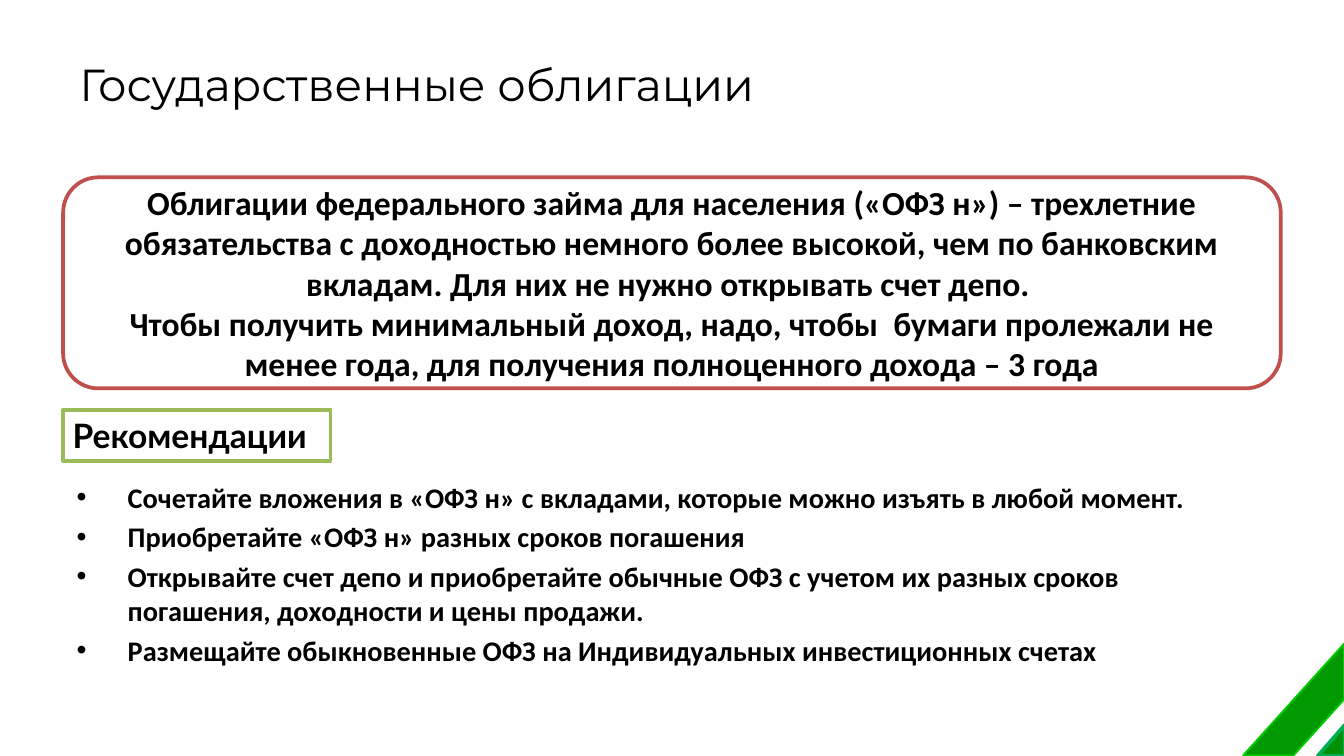
from dataclasses import dataclass

import pptx
import pptx.dml.color
import pptx.enum.shapes
import pptx.enum.text
import pptx.util

Inches = pptx.util.Inches
Pt = pptx.util.Pt
MSO_SHAPE = pptx.enum.shapes.MSO_SHAPE
PP_ALIGN = pptx.enum.text.PP_ALIGN
MSO_ANCHOR = pptx.enum.text.MSO_ANCHOR
MSO_AUTO_SIZE = pptx.enum.text.MSO_AUTO_SIZE

COLORS = {
    "text": "000000",
    "paper": "FFFFFF",
    "red": "C0504D",
    "olive": "9BBB59",
    "stripe": "009900",
    "stripe_edge": "00CC00",
    "corner": "038F06",
    "corner_edge": "00B050",
}

TITLE = "Государственные облигации"
DEFINITION = (
    "Облигации федерального займа для населения («ОФЗ н») – трехлетние "
    "обязательства с доходностью немного более высокой, чем по банковским "
    "вкладам. Для них не нужно открывать счет депо. ",
    "Чтобы получить минимальный доход, надо, чтобы  бумаги пролежали не "
    "менее года, для получения полноценного дохода – 3 года",
)
ADVICE = (
    "Сочетайте вложения в «ОФЗ н» с вкладами, которые можно изъять в любой момент.",
    "Приобретайте «ОФЗ н» разных сроков погашения",
    "Открывайте счет депо и приобретайте обычные ОФЗ с учетом их разных сроков "
    "погашения, доходности и цены продажи.",
    "Размещайте обыкновенные ОФЗ на Индивидуальных инвестиционных счетах",
)


@dataclass(frozen=True)
class Box:
    left: float
    top: float
    width: float
    height: float


@dataclass(frozen=True)
class Figure:
    kind: MSO_SHAPE
    box: Box
    fill: str
    line: str
    line_pt: float = 2
    rotation: float = 0


@dataclass(frozen=True)
class TextStyle:
    font: str
    size: float
    bold: bool = True
    align: PP_ALIGN = PP_ALIGN.LEFT


DEFINITION_FRAME = Figure(
    MSO_SHAPE.ROUNDED_RECTANGLE, Box(0.47, 1.32, 9.06, 1.57), "paper", "red")
ADVICE_LABEL = Figure(
    MSO_SHAPE.RECTANGLE, Box(0.47, 3.05, 1.99, 0.38), "paper", "olive")
CORNER_DECOR = (
    Figure(MSO_SHAPE.DIAGONAL_STRIPE, Box(9.25, 4.79, 0.75, 0.83),
           "stripe", "stripe_edge", 1, 180),
    Figure(MSO_SHAPE.RIGHT_TRIANGLE, Box(9.79, 5.41, 0.23, 0.2),
           "corner", "corner_edge", 2, 270),
)


def rgb(name: str) -> pptx.dml.color.RGBColor:
    return pptx.dml.color.RGBColor.from_string(COLORS[name])


def place(shape, box: Box) -> None:
    shape.left, shape.top = Inches(box.left), Inches(box.top)
    shape.width, shape.height = Inches(box.width), Inches(box.height)


def write(tf, lines: tuple[str, ...], style: TextStyle) -> None:
    """Fill a text frame with one paragraph per line."""
    for i, line in enumerate(lines):
        p = tf.paragraphs[0] if i == 0 else tf.add_paragraph()
        p.alignment = style.align
        r = p.add_run()
        r.text = line
        r.font.name = style.font
        r.font.size = Pt(style.size)
        r.font.bold = style.bold
        r.font.color.rgb = rgb("text")


def draw(s, figure: Figure):
    b = figure.box
    sp = s.shapes.add_shape(figure.kind, Inches(b.left), Inches(b.top),
                            Inches(b.width), Inches(b.height))
    sp.shadow.inherit = False
    sp.rotation = figure.rotation
    sp.fill.solid()
    sp.fill.fore_color.rgb = rgb(figure.fill)
    sp.line.color.rgb = rgb(figure.line)
    sp.line.width = Pt(figure.line_pt)
    return sp


def draw_text_frame(s, figure: Figure, lines: tuple[str, ...],
                    style: TextStyle, anchor: MSO_ANCHOR) -> None:
    tf = draw(s, figure).text_frame
    tf.margin_left = tf.margin_right = Inches(0.07)
    tf.margin_top = tf.margin_bottom = Inches(0.04)
    tf.vertical_anchor = anchor
    tf.word_wrap = True
    write(tf, lines, style)


def fill_title(s) -> None:
    title = s.shapes.title
    place(title, Box(0.49, 0.15, 9, 0.94))
    title.text_frame.auto_size = MSO_AUTO_SIZE.NONE
    title.text_frame.vertical_anchor = MSO_ANCHOR.MIDDLE
    write(title.text_frame, (TITLE,), TextStyle("Montserrat", 24, bold=False))


def fill_advice(s) -> None:
    body = s.placeholders[1]
    place(body, Box(0.47, 3.52, 9, 1.6))
    tf = body.text_frame
    tf.auto_size = MSO_AUTO_SIZE.NONE
    write(tf, ADVICE, TextStyle("Calibri", 15.2))
    for p in tf.paragraphs:
        pPr = p._p.get_or_add_pPr()
        pPr.set("marL", str(Inches(0.38)))
        pPr.set("indent", str(-Inches(0.38)))


def main() -> None:
    prs = pptx.Presentation()
    prs.slide_width = Inches(10)
    prs.slide_height = Inches(10 * 9 / 16)
    s = prs.slides.add_slide(prs.slide_layouts[1])
    fill_title(s)
    fill_advice(s)
    draw_text_frame(s, DEFINITION_FRAME, DEFINITION,
                    TextStyle("Calibri", 18, align=PP_ALIGN.CENTER),
                    MSO_ANCHOR.MIDDLE)
    draw_text_frame(s, ADVICE_LABEL, ("Рекомендации",), TextStyle("Lato", 18),
                    MSO_ANCHOR.TOP)
    for figure in CORNER_DECOR:
        draw(s, figure)
    prs.save("out.pptx")


if __name__ == "__main__":
    main()
